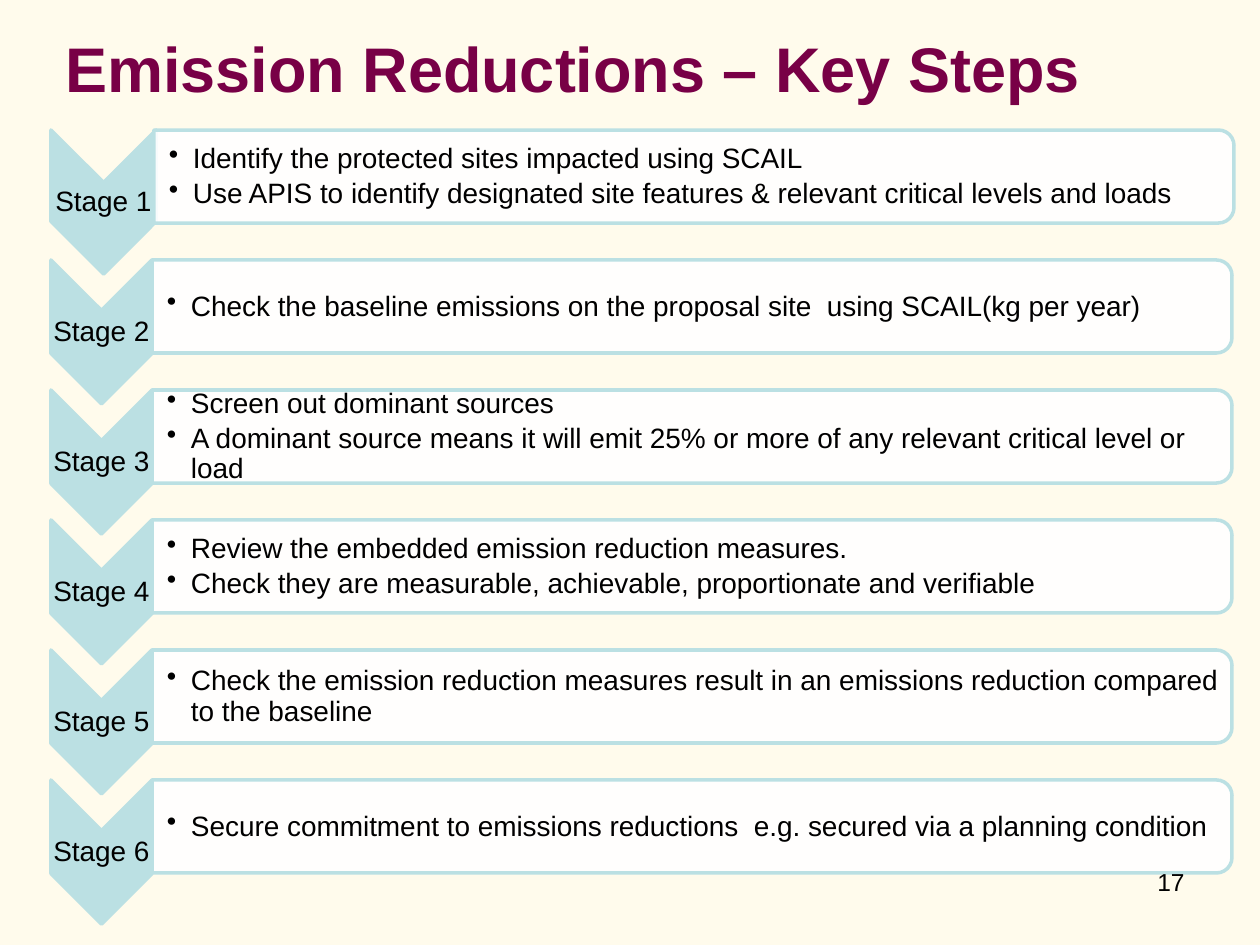
from dataclasses import dataclass

from lxml import etree
from pptx import Presentation
from pptx import util as u
from pptx.dml.color import RGBColor
from pptx.enum import shapes, text
from pptx.oxml import ns


@dataclass(frozen=True)
class Theme:
    font: str = "Arial"
    background: str = "FFFBEC"
    title: str = "780046"
    ink: str = "000000"
    accent: str = "BBE0E3"
    panel: str = "FFFFFF"
    title_size: int = 36
    body_size: int = 16
    number_size: int = 14


THEME = Theme()
PX = u.Inches(1) // 126

# Row grid, in px
ROW_LEFT, ROW_TOP, ROW_PITCH = 51, 130, 130
CHEVRON_HEIGHT = 144
PANEL_WIDTH, PANEL_HEIGHT = 1080, 93
BULLET_INDENT = 24

STAGES = [
    ["Identify the protected sites impacted using SCAIL",
     "Use APIS to identify designated site features & relevant critical levels and loads"],
    ["Check the baseline emissions on the proposal site  using SCAIL(kg per year)"],
    ["Screen out dominant sources",
     "A dominant source means it will emit 25% or more of any relevant critical level or load"],
    ["Review the embedded emission reduction measures.",
     "Check they are measurable, achievable, proportionate and verifiable"],
    ["Check the emission reduction measures result in an emissions reduction compared to the baseline"],
    ["Secure commitment to emissions reductions  e.g. secured via a planning condition"],
]


def rgb(value):
    return RGBColor.from_string(value)


def add_child(parent, tag, **attributes):
    return etree.SubElement(parent, ns.qn(tag), attributes)


def add_turned_shape(slide, preset, left, top, width, height, fill, opacity=None):
    """Add a preset turned a quarter clockwise; the box is the one seen after turning."""
    shift = (width - height) / 2
    box = (left + shift, top - shift, height, width)
    shape = slide.shapes.add_shape(preset, *(round(v * PX) for v in box))
    shape.rotation = 90
    shape.shadow.inherit = False
    shape.fill.solid()
    shape.fill.fore_color.rgb = rgb(fill)
    if opacity is not None:
        color = shape.fill._xPr.find(".//" + ns.qn("a:srgbClr"))
        add_child(color, "a:alpha", val=str(opacity * 1000))
    shape.line.color.rgb = rgb(THEME.accent)
    shape.line.width = u.Pt(2)
    add_child(shape.line._get_or_add_ln(), "a:round")


def add_text(slide, box, lines, size, color=THEME.ink, bold=False, wrap=True,
             align=text.PP_ALIGN.LEFT, anchor=text.MSO_ANCHOR.MIDDLE,
             insets=None, line_spacing=None, after=None, bulleted=False):
    """Add a text box; insets are (left, the other three) in px, after is in percent."""
    frame = slide.shapes.add_textbox(*(v * PX for v in box)).text_frame
    frame.word_wrap = wrap
    frame.vertical_anchor = anchor
    if insets:
        frame.margin_left = insets[0] * PX
        frame.margin_top = frame.margin_right = frame.margin_bottom = insets[1] * PX
    for index, line in enumerate(lines):
        paragraph = frame.paragraphs[0] if index == 0 else frame.add_paragraph()
        paragraph.alignment = align
        if line_spacing:
            paragraph.line_spacing = line_spacing
        properties = paragraph._p.get_or_add_pPr()
        if after:
            spacing = add_child(properties, "a:spcAft")
            add_child(spacing, "a:spcPct", val=str(after * 1000))
        if bulleted:
            paragraph.level = 1
            properties.set("marL", str(BULLET_INDENT * PX))
            properties.set("indent", str(-BULLET_INDENT * PX))
            add_child(properties, "a:buChar", char="•")
        run = paragraph.add_run()
        run.text = line
        run.font.name = THEME.font
        run.font.size = u.Pt(size)
        run.font.bold = bold
        run.font.color.rgb = rgb(color)


def add_stage(slide, number, points):
    top = ROW_TOP + (number - 1) * ROW_PITCH
    # The first chevron is slightly wider than the others
    chevron_width, panel_left = (105, 154) if number == 1 else (101, 152)
    notch = chevron_width // 2

    # Chevron and stage label
    add_turned_shape(slide, shapes.MSO_SHAPE.CHEVRON, ROW_LEFT, top,
                     chevron_width, CHEVRON_HEIGHT, THEME.accent)
    add_text(slide, (ROW_LEFT, top + notch, chevron_width, CHEVRON_HEIGHT - 2 * notch),
             [f"Stage {number}"], THEME.body_size, wrap=False,
             align=text.PP_ALIGN.CENTER, insets=(1, 1), line_spacing=0.9, after=35)

    # Panel and its points
    add_turned_shape(slide, shapes.MSO_SHAPE.ROUND_2_SAME_RECTANGLE, panel_left, top,
                     PANEL_WIDTH, PANEL_HEIGHT, THEME.panel, opacity=90)
    add_text(slide, (panel_left, top + 5, PANEL_WIDTH - 4, PANEL_HEIGHT - 9),
             points, THEME.body_size, insets=(15, 1), line_spacing=0.9,
             after=15, bulleted=True)


def main():
    deck = Presentation()
    deck.slide_width, deck.slide_height = 1260 * PX, 945 * PX
    slide = deck.slides.add_slide(deck.slide_layouts[6])
    slide.background.fill.solid()
    slide.background.fill.fore_color.rgb = rgb(THEME.background)

    # Title
    add_text(slide, (53, 21, 1104, 93), ["Emission Reductions – Key Steps"],
             THEME.title_size, color=THEME.title, bold=True)

    # Stages
    for number, points in enumerate(STAGES, start=1):
        add_stage(slide, number, points)

    # Slide number
    add_text(slide, (903, 861, 294, 65), ["17"], THEME.number_size,
             align=text.PP_ALIGN.RIGHT, anchor=text.MSO_ANCHOR.TOP)

    deck.save("out.pptx")


if __name__ == "__main__":
    main()
